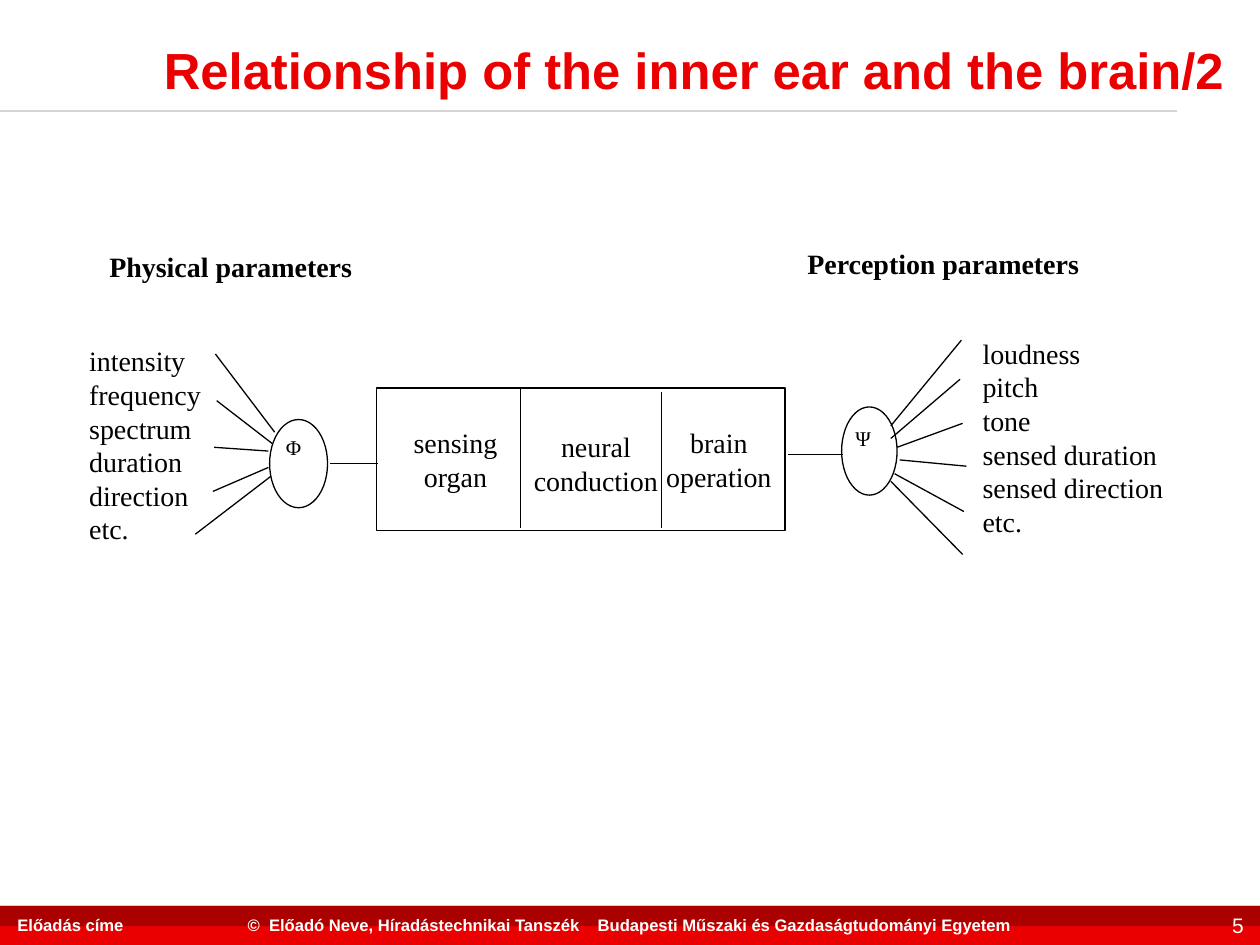
from dataclasses import dataclass

from pptx import Presentation
from pptx import util as u
from pptx.dml.color import RGBColor
from pptx.enum import shapes, text
from pptx.oxml.ns import qn
from lxml import etree


@dataclass(frozen=True)
class Theme:
    red: str = "EA0000"
    dark_red: str = "AA0000"
    grey: str = "D4D4D4"
    ink: str = "000000"
    paper: str = "FFFFFF"
    sans: str = "Arial"
    serif: str = "Times New Roman"
    title_size: float = 29
    body_size: float = 16
    symbol_size: float = 12
    footer_size: float = 9.5
    thin: float = 0.75
    rule: float = 1.5


THEME = Theme()
COLUMNS, ROWS = 100, 75
WIDTH, HEIGHT = u.Inches(10), u.Inches(7.5)
LEFT, CENTER, RIGHT = text.PP_ALIGN.LEFT, text.PP_ALIGN.CENTER, text.PP_ALIGN.RIGHT

PHYSICAL = ["intensity", "frequency", "spectrum", "duration", "direction", "etc."]
PERCEIVED = ["loudness", "pitch", "tone", "sensed duration", "sensed direction", "etc."]
STAGES = [
    ("sensing organ", (31.4, 33.3, 9.5, 9.3)),
    ("neural conduction", (41, 33.6, 12.6, 9.3)),
    ("brain operation", (51.8, 33.3, 10.5, 9)),
]
# Each ray: column and row of its outer end, then of its end at the ellipse.
INPUT_RAYS = [
    (17.1, 28.1, 21.8, 34.3),
    (17.2, 31.8, 21.6, 35.2),
    (17, 35.5, 21.3, 35.8),
    (16.9, 39, 21.3, 37.1),
    (15.5, 42.4, 21.5, 37.8),
]
OUTPUT_RAYS = [
    (76.3, 27, 70.7, 33.8),
    (76.2, 30.1, 70.7, 34.8),
    (76.4, 33.6, 71.2, 35.5),
    (76.7, 37, 71.4, 36.5),
    (76.5, 40.6, 71, 37.6),
    (76.4, 44, 70.7, 38.2),
]
STEMS = [(26.2, 36.8, 30, 36.8), (62.5, 36.1, 66.9, 36.1)]
DIVIDERS = [(41.3, 30.8, 41.3, 41.9), (52.5, 31.1, 52.5, 41.9)]


def place(cells):
    """Turn column, row, column, row into slide lengths."""
    scales = (WIDTH / COLUMNS, HEIGHT / ROWS) * 2
    return [round(cell * scale) for cell, scale in zip(cells, scales)]


def rgb(value):
    return RGBColor.from_string(value)


def write(box, lines, size=THEME.body_size, font=THEME.serif, color=THEME.ink,
          bold=False, align=LEFT, anchor=text.MSO_ANCHOR.TOP, wrap=True):
    frame = box.text_frame
    frame.word_wrap = wrap
    frame.auto_size = text.MSO_AUTO_SIZE.NONE
    frame.vertical_anchor = anchor
    frame.margin_left = frame.margin_right = u.Inches(0.1)
    frame.margin_top = frame.margin_bottom = u.Inches(0.05)
    for index, line in enumerate(lines):
        para = frame.add_paragraph() if index else frame.paragraphs[0]
        para.alignment = align
        span = para.add_run()
        span.text = line
        span.font.size = u.Pt(size)
        span.font.name = font
        span.font.bold = bold
        span.font.color.rgb = rgb(color)


def add_text(page, cells, *lines, **style):
    write(page.shapes.add_textbox(*place(cells)), lines, **style)


def add_figure(page, kind, cells, fill=None, line=None):
    figure = page.shapes.add_shape(kind, *place(cells))
    figure.shadow.inherit = False
    if fill:
        figure.fill.solid()
        figure.fill.fore_color.rgb = rgb(fill)
    else:
        figure.fill.background()
    if line:
        figure.line.color.rgb = rgb(line)
        figure.line.width = u.Pt(THEME.thin)
    else:
        figure.line.fill.background()


def add_line(page, ends, color=THEME.ink, width=THEME.thin):
    line = page.shapes.add_connector(shapes.MSO_CONNECTOR.STRAIGHT, *place(ends))
    line.line.color.rgb = rgb(color)
    line.line.width = u.Pt(width)
    etree.SubElement(line._element.spPr, qn("a:effectLst"))


def add_title(page):
    title = page.shapes.title
    title.left, title.top, title.width, title.height = place((12, 3.6, 87.1, 3.8))
    write(title, ["Relationship of the inner ear and the brain/2"],
          size=THEME.title_size, font=THEME.sans, color=THEME.red, bold=True,
          anchor=text.MSO_ANCHOR.MIDDLE, wrap=False)


def add_frame(page):
    """Draw the footer band with its text and the rule below the title."""
    for depth, fill in ((3.1, THEME.red), (1.6, THEME.dark_red)):
        add_figure(page, shapes.MSO_SHAPE.RECTANGLE, (0, 71.9, COLUMNS, depth), fill=fill)
    add_line(page, (0, 8.8, 93.4, 8.8), color=THEME.grey, width=THEME.rule)
    footer = dict(font=THEME.sans, color=THEME.paper, anchor=text.MSO_ANCHOR.MIDDLE)
    label = dict(footer, size=THEME.footer_size, bold=True)
    add_text(page, (0.4, 71.8, 29.4, 3.2), "Előadás címe", **label)
    add_text(page, (92.5, 71.8, 7.2, 3.2), "5",
             size=THEME.symbol_size, align=RIGHT, **footer)
    add_text(page, (32.5, 71.8, 34.9, 3.2),
             "©  Előadó Neve, Híradástechnikai Tanszék    "
             "Budapesti Műszaki és Gazdaságtudományi Egyetem",
             align=CENTER, wrap=False, **label)


def add_parameters(page):
    add_text(page, (7.7, 19.3, 25.7, 4.7), "Physical parameters", bold=True)
    add_text(page, (63.1, 19.1, 28.4, 9), "Perception parameters", bold=True)
    add_text(page, (6.1, 26.8, 11, 15.5), *PHYSICAL)
    add_text(page, (77, 26.2, 18, 16.5), *PERCEIVED)


def add_symbol(page, letter, oval, label):
    add_figure(page, shapes.MSO_SHAPE.OVAL, oval, fill=THEME.paper, line=THEME.ink)
    add_text(page, label, letter, size=THEME.symbol_size)


def add_pathway(page):
    for stage, cells in STAGES:
        add_text(page, cells, stage, align=CENTER)
    add_figure(page, shapes.MSO_SHAPE.RECTANGLE, (29.9, 30.8, 32.4, 11.3), line=THEME.ink)
    add_symbol(page, "Φ", (21.4, 33.3, 4.6, 7), (21.7, 34, 3.8, 5.9))
    add_symbol(page, "Ψ", (66.8, 32.3, 4.4, 7), (66.9, 33.3, 5.3, 6.3))
    for ends in DIVIDERS + STEMS + INPUT_RAYS + OUTPUT_RAYS:
        add_line(page, ends)


def main():
    deck = Presentation()
    deck.slide_width, deck.slide_height = WIDTH, HEIGHT
    page = deck.slides.add_slide(deck.slide_layouts[5])
    add_frame(page)
    add_parameters(page)
    add_pathway(page)
    add_title(page)
    deck.save("out.pptx")


if __name__ == "__main__":
    main()
